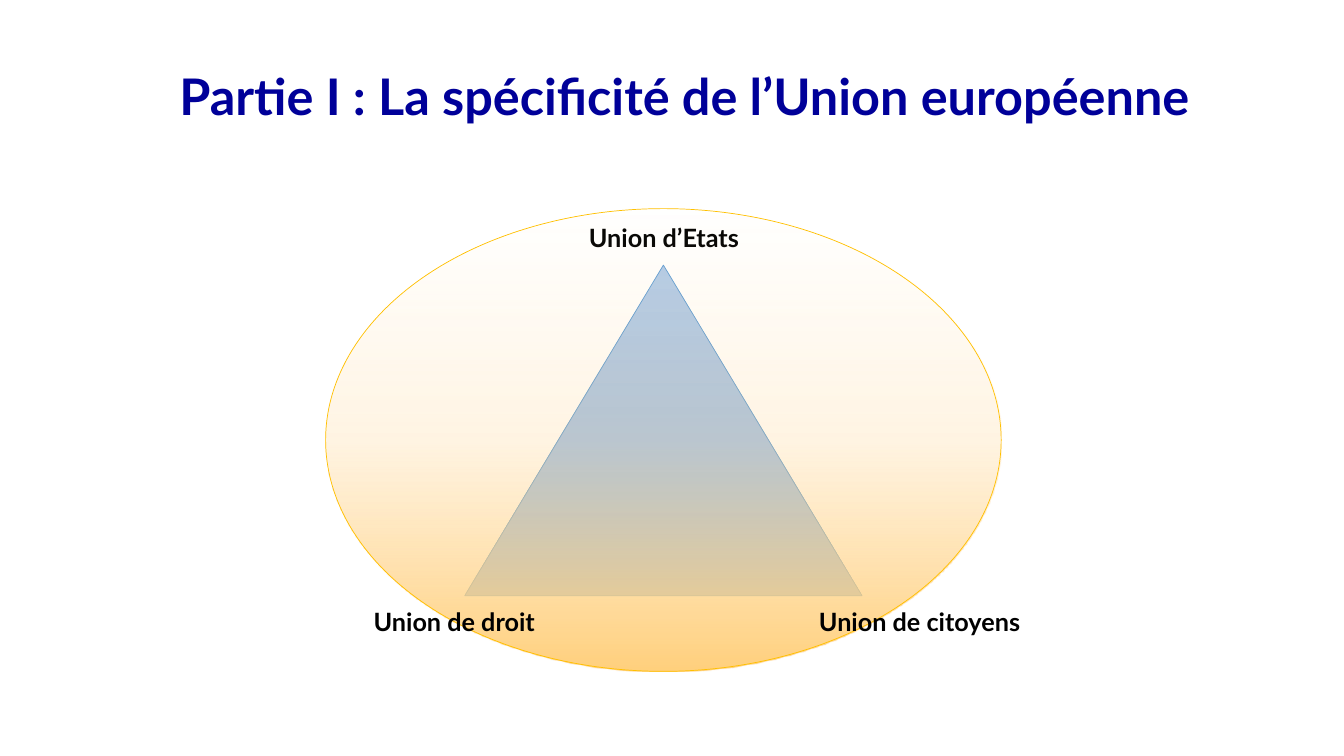
"""Build the slide on the specific nature of the European Union."""
from lxml import etree
from pptx import Presentation
from pptx.dml.color import RGBColor
from pptx.enum.shapes import MSO_SHAPE
from pptx.enum.text import PP_ALIGN
from pptx.oxml.ns import qn
from pptx.util import Inches, Pt

TRIANGLE, OVAL = MSO_SHAPE.ISOSCELES_TRIANGLE, MSO_SHAPE.OVAL
CENTER = PP_ALIGN.CENTER

THEME = {
    "font": "Lato",
    "title": (36, "000099"),
    "label": (18, "000000"),
    "triangle": [(0, "B1CBE9", 100), (50, "A3C1E5", 100), (100, "93B9E4", 100)],
    "triangle_line": "5B9BD5",
    "oval": [(0, "FFDB9E", 0), (50, "FFD590", 25), (100, "FFD07C", 100)],
    "oval_line": "FFC000",
    "line_width": 0.5,
}

TITLE = ("Partie I : La spécificité de l’Union européenne", (0.92, 0.66, 11.74, 6.42))
TOP_LABEL = ("Union d’Etats", (5.61, 2.16, 1.95, 0.4))
BASE_LABELS = [
    ("Union de droit", (3.53, 5.97, 1.95, 0.4)),
    ("Union de citoyens", (7.79, 5.97, 2.66, 0.4)),
]
TRIANGLE_BOX = (4.61, 2.63, 3.94, 3.28)
OVAL_BOX = (3.23, 2.07, 6.7, 4.59)


def add_text(s, text, box, style, spacing=1.0):
    size, color = THEME[style]
    tf = s.shapes.add_textbox(*map(Inches, box)).text_frame
    tf.word_wrap = True
    p = tf.paragraphs[0]
    p.alignment = CENTER
    p.line_spacing = spacing
    r = p.add_run()
    r.text = text
    r.font.name = THEME["font"]
    r.font.size = Pt(size)
    r.font.bold = True
    r.font.color.rgb = RGBColor.from_string(color)


def add_gradient_shape(s, kind, box, style):
    sp = s.shapes.add_shape(kind, *map(Inches, box))
    sp.shadow.inherit = False
    sp.line.color.rgb = RGBColor.from_string(THEME[style + "_line"])
    sp.line.width = Pt(THEME["line_width"])
    sp.fill.gradient()
    sp.fill.gradient_angle = 270
    stops = sp.fill._xPr.find(qn("a:gradFill")).find(qn("a:gsLst"))
    for stop in list(stops):
        stops.remove(stop)
    for position, color, opacity in THEME[style]:
        stop = etree.SubElement(stops, qn("a:gs"), pos=str(position * 1000))
        rgb = etree.SubElement(stop, qn("a:srgbClr"), val=color)
        etree.SubElement(rgb, qn("a:alpha"), val=str(opacity * 1000))


def main():
    prs = Presentation()
    prs.slide_width, prs.slide_height = Inches(13.33), Inches(7.5)
    s = prs.slides.add_slide(prs.slide_layouts[6])
    add_text(s, *TITLE, "title", 0.9)
    add_gradient_shape(s, TRIANGLE, TRIANGLE_BOX, "triangle")
    add_text(s, *TOP_LABEL, "label")
    add_gradient_shape(s, OVAL, OVAL_BOX, "oval")
    for text, box in BASE_LABELS:
        add_text(s, text, box, "label")
    prs.save("out.pptx")


if __name__ == "__main__":
    main()
